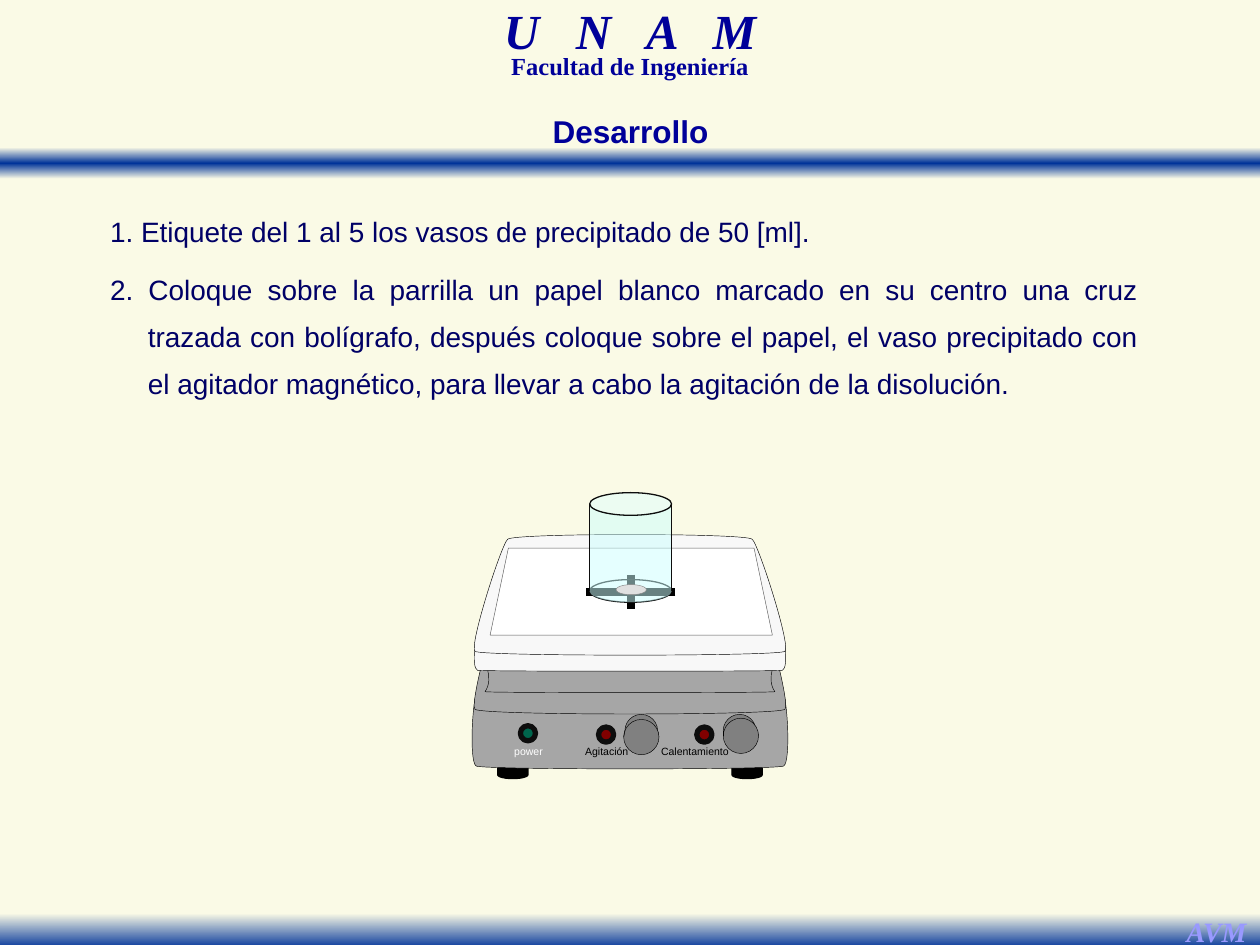
from copy import deepcopy
from dataclasses import dataclass

from lxml import etree
from pptx import Presentation
from pptx.dml.color import RGBColor
from pptx.enum.shapes import MSO_CONNECTOR, MSO_SHAPE
from pptx.enum.text import MSO_ANCHOR, MSO_AUTO_SIZE, PP_ALIGN
from pptx.oxml.ns import qn
from pptx.util import Cm, Pt

STRAIGHT = MSO_CONNECTOR.STRAIGHT
RECTANGLE, OVAL = MSO_SHAPE.RECTANGLE, MSO_SHAPE.OVAL
CAN, TRAPEZOID = MSO_SHAPE.CAN, MSO_SHAPE.TRAPEZOID
CENTER, JUSTIFY = PP_ALIGN.CENTER, PP_ALIGN.JUSTIFY
MIDDLE, NO_AUTOFIT = MSO_ANCHOR.MIDDLE, MSO_AUTO_SIZE.NONE
SANS, SERIF = "Arial", "Times New Roman"
COLORS = {
    "cream": "FAFAE6", "blue": "003399", "heading": "000099", "body": "000066",
    "lilac": "9999FF", "black": "000000", "ink": "0D0D0D", "white": "FFFFFF",
    "metal": "A6A6A6", "plate": "F8F8F8", "knob": "808080", "paper_edge": "595959",
    "green": "00664D", "red": "800000", "glass": "CCFFFF",
    "stirrer": "E0E0E0", "stirrer_edge": "858585",
}
Point = tuple[float, float]
Bounds = tuple[float, float, float, float]
CENTER_X = 5.0


@dataclass
class Style:
    size: float
    color: str
    font: str = SANS
    bold: bool = False
    italic: bool = False


@dataclass
class Label:
    text: str
    bounds: Bounds
    style: Style
    spacing: float = 1.0
    wrap: bool = True


@dataclass
class Panel:
    """Left half of a curved outline that is symmetric about CENTER_X."""
    bounds: Bounds
    side: tuple[Point, Point, Point, Point]
    top_control: Point
    bottom_control: Point
    fill: str


@dataclass
class Knob:
    left: float
    front_top: float
    lean: float


@dataclass
class Light:
    left: float
    top: float
    color: str


SMALL_BLACK = Style(6, "black")
INITIALS = Label("AVM", (9.31, 7.21, 0.69, 0.37),
                 Style(16, "lilac", SERIF, True, True), wrap=False)
MASTHEAD = [
    Label("U   N   A   M", (3.04, 0.08, 3.92, 0.43),
          Style(28, "heading", SERIF, True, True), 0.7),
    Label("Facultad de Ingeniería", (3.21, 0.42, 3.58, 0.26),
          Style(14, "heading", SERIF, True), 0.7),
]
CONTROL_LABELS = [
    Label("power", (3.98, 5.86, 0.43, 0.2), Style(6, "white"), wrap=False),
    Label("Agitación", (4.54, 5.86, 0.55, 0.2), SMALL_BLACK, wrap=False),
    Label("Calentamiento", (5.14, 5.86, 0.75, 0.2), SMALL_BLACK, wrap=False),
]
STEPS = [
    "1. Etiquete del 1 al 5 los vasos de precipitado de 50 [ml].",
    "2. Coloque sobre la parrilla un papel blanco marcado en su centro una cruz "
    "trazada con bolígrafo, después coloque sobre el papel, el vaso precipitado con "
    "el agitador magnético, para llevar a cabo la agitación de la disolución.",
]
PANELS = [
    Panel((3.75, 5.44, 2.5, 0.67), ((3.78, 6.08), (3.72, 6.05), (3.75, 5.49), (3.8, 5.46)),
          (3.85, 5.43), (3.83, 6.11), "metal"),
    Panel((3.76, 4.56, 2.48, 1.1), ((3.77, 5.63), (3.72, 5.58), (3.98, 4.66), (4.03, 4.6)),
          (4.08, 4.55), (3.82, 5.68), "metal"),
    Panel((3.85, 5.22, 2.3, 0.27), ((3.85, 5.49), (3.93, 5.37), (3.82, 5.24), (3.87, 5.23)),
          (3.91, 5.22), (3.9, 5.5), "metal"),
    Panel((3.76, 5.01, 2.48, 0.31), ((3.79, 5.32), (3.74, 5.3), (3.77, 5.04), (3.81, 5.02)),
          (3.86, 5.01), (3.84, 5.33), "plate"),
    Panel((3.76, 4.25, 2.48, 0.96), ((3.77, 5.17), (3.72, 5.13), (3.98, 4.32), (4.03, 4.28)),
          (4.08, 4.23), (3.82, 5.21), "plate"),
]
KNOBS = [Knob(4.95, 5.71, 0.01), Knob(5.74, 5.7, 0)]
LIGHTS = [Light(4.75, 5.77, "red"), Light(5.53, 5.77, "red"), Light(4.13, 5.76, "green")]


def length(inches: float) -> Cm:
    return Cm(inches * 2.54)


def rgb(name: str) -> RGBColor:
    return RGBColor.from_string(COLORS[name])


def paint(shape, fill: str | None, line: str | None, width: float) -> None:
    shape.shadow.inherit = False
    if fill:
        shape.fill.solid()
        shape.fill.fore_color.rgb = rgb(fill)
    else:
        shape.fill.background()
    if line:
        shape.line.color.rgb = rgb(line)
        shape.line.width = Pt(width)
    else:
        shape.line.fill.background()


def add_preset(shapes, kind, bounds: Bounds, fill: str | None = None,
               line: str | None = None, width: float = 0.25, adjust: float | None = None):
    shape = shapes.add_shape(kind, *map(length, bounds))
    paint(shape, fill, line, width)
    if adjust is not None:
        shape.adjustments[0] = adjust
    return shape


def add_band(shapes, bounds: Bounds, stops: list[tuple[float, str]]) -> None:
    """Draw a bar whose colours run from top to bottom."""
    band = add_preset(shapes, RECTANGLE, bounds)
    band.fill.gradient()
    band.fill.gradient_angle = 270
    stop_list = band._element.spPr.find(qn("a:gradFill")).find(qn("a:gsLst"))
    while len(stop_list) < len(stops):
        stop_list.append(deepcopy(stop_list[0]))
    for stop, (position, color) in zip(band.fill.gradient_stops, stops):
        stop.position = position
        stop.color.rgb = rgb(color)


def add_line(shapes, start: Point, end: Point, color: str, width: float) -> None:
    line = shapes.add_connector(STRAIGHT, *map(length, start + end))
    line.line.color.rgb = rgb(color)
    line.line.width = Pt(width)
    etree.SubElement(line._element.spPr, qn("a:effectLst"))


def format_paragraph(para, style: Style, align, spacing: float) -> None:
    para.alignment = align
    para.line_spacing = spacing
    for span in para.runs:
        font = span.font
        font.name, font.size = style.font, Pt(style.size)
        font.bold, font.italic = style.bold, style.italic
        font.color.rgb = rgb(style.color)


def add_label(shapes, label: Label) -> None:
    box = shapes.add_textbox(*map(length, label.bounds))
    box.text_frame.word_wrap = label.wrap
    box.text_frame.text = label.text
    format_paragraph(box.text_frame.paragraphs[0], label.style, CENTER, label.spacing)


def add_title(slide) -> None:
    title = slide.shapes.title
    title.left, title.top, title.width, title.height = map(length, (2.84, 0.84, 4.33, 0.4))
    frame = title.text_frame
    frame.text = "Desarrollo"
    frame.auto_size, frame.vertical_anchor = NO_AUTOFIT, MIDDLE
    format_paragraph(frame.paragraphs[0], Style(18, "heading", bold=True), CENTER, 1.0)
    slide.shapes._spTree.append(title._element)  # in front of the band


def add_steps(shapes) -> None:
    frame = shapes.add_textbox(Cm(1.97), Cm(3.94), Cm(21.22), Cm(4.37)).text_frame
    frame.word_wrap = True
    frame.text = "\n".join(STEPS)
    for para in frame.paragraphs:
        format_paragraph(para, Style(16, "body"), JUSTIFY, 1.4)
        para.space_after = Pt(6)
    properties = frame.paragraphs[1]._p.get_or_add_pPr()
    properties.set("marL", str(length(0.3)))
    properties.set("indent", str(-length(0.3)))


def mirror(point: Point) -> Point:
    return 2 * CENTER_X - point[0], point[1]


def add_panel(shapes, panel: Panel) -> None:
    left, top, width, height = map(length, panel.bounds)
    low, high = panel.side[0], panel.side[-1]
    curves = [
        panel.side[1:],
        (panel.top_control, mirror(panel.top_control), mirror(high)),
        tuple(map(mirror, panel.side[2::-1])),
        (mirror(panel.bottom_control), panel.bottom_control, low),
    ]
    builder = shapes.build_freeform(*map(length, low), scale=1.0)
    builder.add_line_segments([tuple(map(length, curve[-1])) for curve in curves], close=True)
    shape = builder.convert_to_shape()
    shape.left, shape.top, shape.width, shape.height = left, top, width, height
    path = next(shape._element.iter(qn("a:path")))
    path.set("w", str(width))
    path.set("h", str(height))

    def place(node, point: Point) -> None:
        node.set("x", str(length(point[0]) - left))
        node.set("y", str(length(point[1]) - top))

    place(path.find(qn("a:moveTo"))[0], low)
    for segment, curve in zip(path.findall(qn("a:lnTo")), curves):
        bezier = etree.Element(qn("a:cubicBezTo"))
        path.replace(segment, bezier)
        for point in curve:
            place(etree.SubElement(bezier, qn("a:pt")), point)
    paint(shape, panel.fill, "black", 0.25)


def add_knob(shapes, knob: Knob) -> None:
    left, right, level = knob.left, knob.left + 0.28, knob.front_top + 0.14
    add_line(shapes, (right, level), (right - 0.01, 5.8), "black", 0.25)
    add_preset(shapes, OVAL, (left + knob.lean, 5.67, 0.26, 0.26), "knob", "black")
    add_preset(shapes, OVAL, (left, knob.front_top, 0.28, 0.28), "knob", "black")
    add_line(shapes, (left, level), (left + knob.lean, 5.8), "black", 0.25)


def add_hot_plate(shapes) -> None:
    for left in (5.81, 3.95):
        add_preset(shapes, CAN, (left, 5.91, 0.24, 0.27), "black", "black", 0.75)
    for panel in PANELS:
        add_panel(shapes, panel)
    for knob in KNOBS:
        add_knob(shapes, knob)
    for light in LIGHTS:
        add_preset(shapes, OVAL, (light.left, light.top, 0.12, 0.12), light.color, "ink", 3)
    for label in CONTROL_LABELS:
        add_label(shapes, label)


def add_marked_paper(shapes) -> None:
    add_preset(shapes, TRAPEZOID, (3.89, 4.35, 2.24, 0.69), "white", "paper_edge", adjust=0.21)
    add_line(shapes, (5.01, 4.56), (5.01, 4.83), "black", 4.5)
    add_line(shapes, (5.36, 4.7), (4.65, 4.7), "black", 4.5)


def add_beaker(shapes) -> None:
    left, top, width, height, rim = 4.68, 3.91, 0.65, 0.87, 0.18
    add_preset(shapes, OVAL, (left, top + height - rim, width, rim), None, "ink", 0.75)
    glass = add_preset(shapes, CAN, (left, top, width, height), "glass", adjust=0.27)
    color = glass._element.spPr.find(qn("a:solidFill"))[0]
    etree.SubElement(color, qn("a:alpha"), val="51000")
    add_preset(shapes, OVAL, (left, top, width, rim), None, "ink", 0.75)
    for x in (left + width, left):
        add_line(shapes, (x, top + rim / 2), (x, top + height - rim / 2), "ink", 0.75)
    add_preset(shapes, OVAL, (4.89, 4.64, 0.24, 0.08), "stirrer", "stirrer_edge")


def main() -> None:
    deck = Presentation()
    deck.slide_width, deck.slide_height = length(10), length(7.5)
    slide = deck.slides.add_slide(deck.slide_layouts[5])
    slide.background.fill.solid()
    slide.background.fill.fore_color.rgb = rgb("cream")
    shapes = slide.shapes
    add_band(shapes, (0, 1.17, 10, 0.25), [(0, "cream"), (0.5, "blue"), (1, "cream")])
    add_band(shapes, (0, 7.25, 10, 0.28), [(0, "cream"), (1, "blue")])
    for label in [*MASTHEAD, INITIALS]:
        add_label(shapes, label)
    add_title(slide)
    add_steps(shapes)
    add_hot_plate(shapes)
    add_marked_paper(shapes)
    add_beaker(shapes)
    deck.save("out.pptx")


if __name__ == "__main__":
    main()
